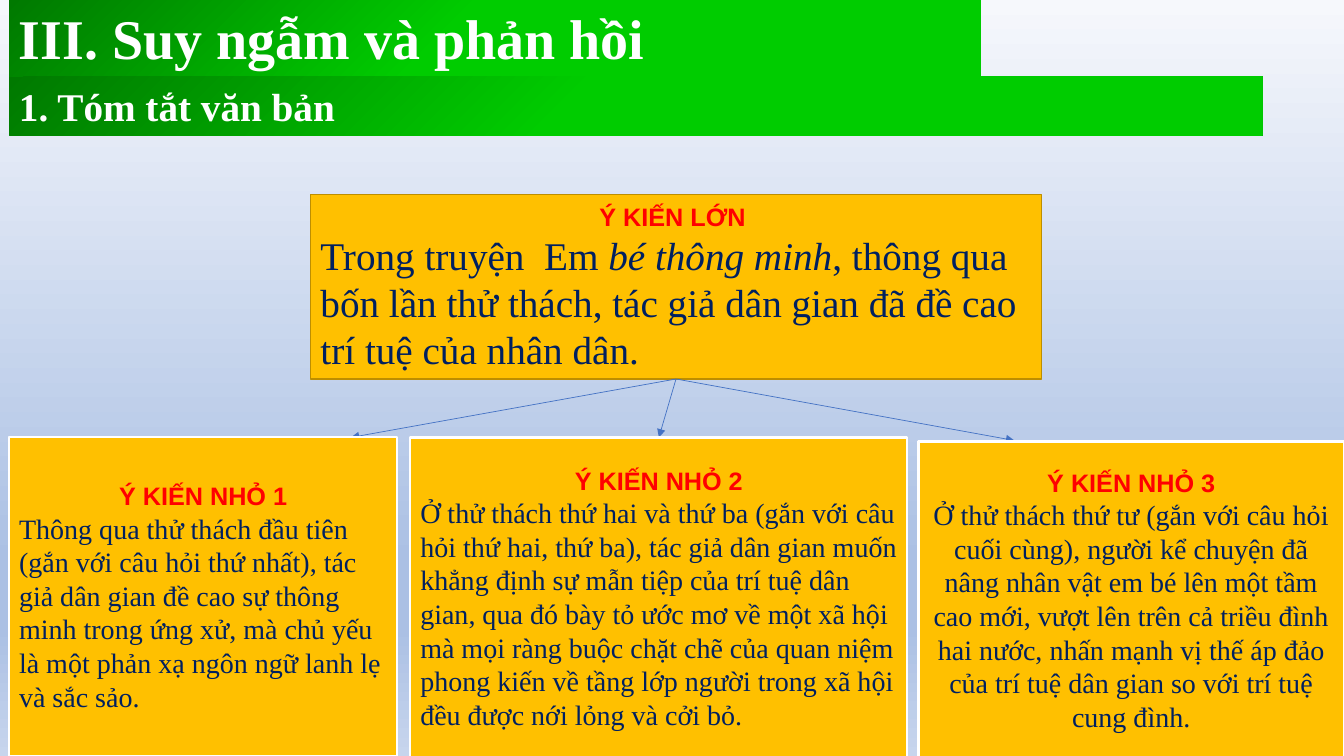
import copy

import pptx
import pptx.dml.color
import pptx.enum.shapes
import pptx.enum.text
import pptx.oxml
import pptx.oxml.ns
import pptx.util

PX = 9144  # 100 px to the inch
COLORS = {
    "dark_green": "007900", "green": "00CC00", "amber": "FFC000",
    "amber_edge": "BD8E00", "white": "FFFFFF", "red": "FF0000",
    "navy": "002060", "arrow": "4472C4",
    "sky_top": "F6F8FC", "sky": "ABC0E4", "sky_bottom": "C7D5ED",
}
SERIF, SANS = "Times New Roman", "Arial"
LEFT = pptx.enum.text.PP_ALIGN.LEFT
CENTER = pptx.enum.text.PP_ALIGN.CENTER
qn = pptx.oxml.ns.qn


def color(name):
    return pptx.dml.color.RGBColor.from_string(COLORS[name])


def set_gradient(fill, holder, stops, angle):
    """Give the fill its stops (position, colour name) and its angle."""
    fill.gradient()
    fill.gradient_angle = angle
    stop_list = next(holder.iter(qn("a:gsLst")))
    while len(stop_list) < len(stops):
        stop_list.append(copy.deepcopy(stop_list[0]))
    for stop, (position, name) in zip(fill.gradient_stops, stops):
        stop.position = position
        stop.color.rgb = color(name)


def add_box(page, bounds):
    box = page.shapes.add_shape(
        pptx.enum.shapes.MSO_SHAPE.RECTANGLE, *(n * PX for n in bounds))
    box.shadow.inherit = False
    box.text_frame.word_wrap = True
    box.text_frame.vertical_anchor = pptx.enum.text.MSO_ANCHOR.MIDDLE
    return box


def add_span(para, text, size, font, name, bold=False, italic=False):
    span = para.add_run()
    span.text = text
    span.font.size = pptx.util.Pt(size)
    span.font.name = font
    span.font.color.rgb = color(name)
    span.font.bold = bold
    span.font.italic = italic


def add_heading(page, bounds, text, size, spacing):
    box = add_box(page, bounds)
    set_gradient(box.fill, box.element,
                 [(0, "dark_green"), (0.45, "green")], 315)
    box.line.fill.background()
    para = box.text_frame.paragraphs[0]
    para.alignment = LEFT
    para.line_spacing = spacing
    add_span(para, text, size, SERIF, "white", bold=True)


def add_idea(page, bounds, label, body, size, edge, edge_width, align=LEFT):
    """Amber box: red label, then body runs given as (text, italic)."""
    box = add_box(page, bounds)
    box.fill.solid()
    box.fill.fore_color.rgb = color("amber")
    box.line.color.rgb = color(edge)
    box.line.width = pptx.util.Pt(edge_width)
    para = box.text_frame.paragraphs[0]
    para.alignment = CENTER
    add_span(para, label, 18, SANS, "red", bold=True)
    para = box.text_frame.add_paragraph()
    para.alignment = align
    for text, italic in body:
        add_span(para, text, size, SERIF, "navy", italic=italic)
    return box


def add_arrow(page, source, end_x, end_y):
    arrow = page.shapes.add_connector(
        pptx.enum.shapes.MSO_CONNECTOR.STRAIGHT, 0, 0, end_x * PX, end_y * PX)
    arrow.begin_connect(source, 2)
    arrow.line.color.rgb = color("arrow")
    arrow.line.width = pptx.util.Pt(0.5)
    head = pptx.oxml.parse_xml(
        f'<a:tailEnd {pptx.oxml.ns.nsdecls("a")} type="triangle"/>')
    arrow.line._get_or_add_ln().append(head)
    arrow.element.spPr.append(pptx.oxml.parse_xml(
        f'<a:effectLst {pptx.oxml.ns.nsdecls("a")}/>'))
    return arrow


SMALL_IDEAS = [
    ((9, 434, 385, 316), LEFT,
     "Thông qua thử thách đầu tiên (gắn với câu hỏi thứ nhất), tác giả dân "
     "gian đề cao sự thông minh trong ứng xử, mà chủ yếu là một phản xạ ngôn "
     "ngữ lanh lẹ và sắc sảo."),
    ((407, 434, 493, 319), LEFT,
     "Ở thử thách thứ hai và thứ ba (gắn với câu hỏi thứ hai, thứ ba), tác "
     "giả dân gian muốn khẳng định sự mẫn tiệp của trí tuệ dân gian, qua đó "
     "bày tỏ ước mơ về một xã hội mà mọi ràng buộc chặt chẽ của quan niệm "
     "phong kiến về tầng lớp người trong xã hội đều được nới lỏng và cởi bỏ."),
    ((911, 438, 422, 315), CENTER,
     "Ở thử thách thứ tư (gắn với câu hỏi cuối cùng), người kể chuyện đã "
     "nâng nhân vật em bé lên một tầm cao mới, vượt lên trên cả triều đình "
     "hai nước, nhấn mạnh vị thế áp đảo của trí tuệ dân gian so với trí tuệ "
     "cung đình."),
]


def main():
    deck = pptx.Presentation()
    deck.slide_width, deck.slide_height = 1333 * PX, 750 * PX
    page = deck.slides.add_slide(deck.slide_layouts[6])

    # Background
    set_gradient(page.background.fill, page.element,
                 [(0, "sky_top"), (0.74, "sky"), (0.83, "sky"),
                  (1, "sky_bottom")], 270)

    # Headings
    add_heading(page, (9, 0, 964, 82), "III. Suy ngẫm và phản hồi", 40, 0.9)
    add_heading(page, (9, 76, 1243, 58), "1. Tóm tắt văn bản", 28, 1.0)

    # Main idea
    main_idea = add_idea(
        page, (308, 193, 725, 183), "Ý KIẾN LỚN ",
        [("Trong truyện  Em ", False), ("bé thông minh", True),
         (", thông qua bốn lần thử thách, tác giả dân gian đã đề cao "
          "trí tuệ của nhân dân.", False)],
        28, "amber_edge", 1)

    # Arrows lie behind the small ideas
    arrows = [add_arrow(page, main_idea, x, y)
              for x, y in ((348, 434), (653, 434), (1006, 437))]

    # Small ideas
    boxes = [add_idea(page, bounds, f"Ý KIẾN NHỎ {number}", [(text, False)],
                      20, "white", 1.5, align)
             for number, (bounds, align, text) in enumerate(SMALL_IDEAS, 1)]
    arrows[1].end_connect(boxes[1], 0)

    deck.save("out.pptx")


if __name__ == "__main__":
    main()
